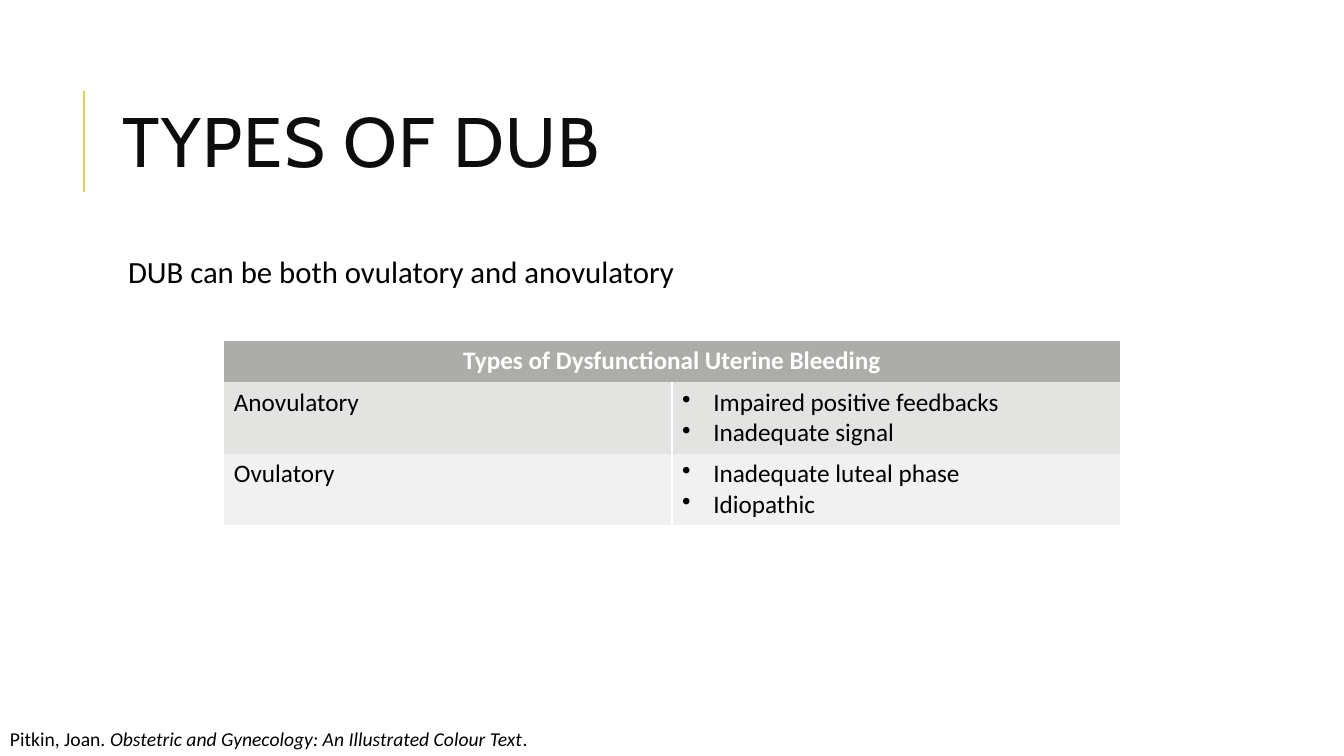
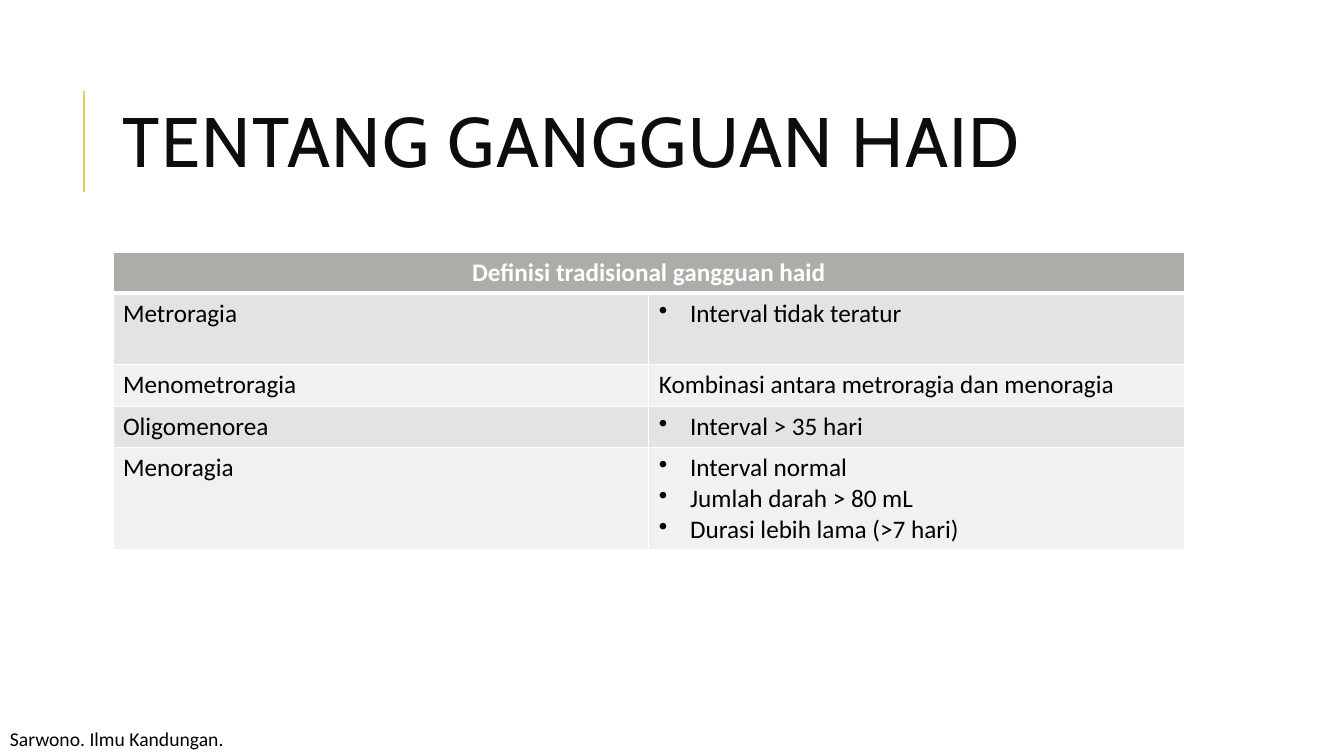
"""Two slides on menstrual disorders, each with a title, a table and a source."""
from lxml.etree import SubElement
from pptx import Presentation
from pptx.dml.color import RGBColor
from pptx.enum.shapes import MSO_CONNECTOR
from pptx.enum.text import MSO_ANCHOR, PP_ALIGN
from pptx.oxml import parse_xml
from pptx.oxml.ns import nsdecls, qn
from pptx.util import Inches, Pt

HUE = {"ink": "000000", "title": "0D0D0D", "rule": "E3CC5A", "white": "FFFFFF",
       "head": "ACADA8", "odd": "E3E3E1", "even": "F1F1F1"}
LEFT, WIDE = 1.12, 10.63

SLIDES = [
    {"title": "TYPES OF DUB",
     "lead": "DUB can be both ovulatory and anovulatory",
     "spot": (2.22, 3.38, 8.89),
     "edges": ((0, 0, 0, 0), (1, 1, 0, 0)),
     "head": "Types of Dysfunctional Uterine Bleeding",
     "rows": [("Anovulatory", 0.71, ["• Impaired positive feedbacks", "• Inadequate signal"]),
              ("Ovulatory", 0.71, ["• Inadequate luteal phase", "• Idiopathic"])],
     "note": [("Pitkin, Joan. ", False),
              ("Obstetric and Gynecology: An Illustrated Colour Text", True), (".", False)]},
    {"title": "TENTANG GANGGUAN HAID",
     "lead": None,
     "spot": (LEFT, 2.5, WIDE),
     "edges": ((1, 1, 1, 3), (1, 1, 1, 1)),
     "head": "Definisi tradisional gangguan haid",
     "rows": [("Metroragia", 0.71, ["• Interval tidak teratur"]),
              ("Menometroragia", 0.41, ["Kombinasi antara metroragia dan menoragia"]),
              ("Oligomenorea", 0.41, ["• Interval > 35 hari"]),
              ("Menoragia", 1.01, ["• Interval normal", "• Jumlah darah > 80 mL",
                                   "• Durasi lebih lama (>7 hari)"])],
     "note": [("Sarwono. Ilmu Kandungan.", False)]},
]


def style(para, size, color, face="Calibri", bold=False):
    font = para.font
    font.name, font.size, font.bold = face, Pt(size), bold
    font.color.rgb = RGBColor.from_string(HUE[color])


def paint(cell, fill, edges, lines, color="ink", bold=False):
    props = cell._tc.get_or_add_tcPr()
    for side, width in zip("LRTB", edges):
        line = SubElement(props, qn(f"a:ln{side}"), w=str(Pt(width)))
        if width:
            solid = SubElement(line, qn("a:solidFill"))
            SubElement(solid, qn("a:srgbClr"), val=HUE["white"])
        else:
            SubElement(line, qn("a:noFill"))
    cell.fill.solid()
    cell.fill.fore_color.rgb = RGBColor.from_string(HUE[fill])
    cell.text = "\n".join(line.removeprefix("• ") for line in lines)
    for para, line in zip(cell.text_frame.paragraphs, lines):
        style(para, 18, color, bold=bold)
        if line.startswith("• "):
            form = para._p.get_or_add_pPr()
            form.set("marL", str(Inches(0.31)))
            form.set("indent", str(-Inches(0.31)))
            form.insert(0, parse_xml(f'<a:buChar {nsdecls("a")} char="•"/>'))


deck = Presentation()
deck.slide_width, deck.slide_height = Inches(13.33), Inches(7.5)

for data in SLIDES:
    slide = deck.slides.add_slide(deck.slide_layouts[6])
    shapes = slide.shapes

    rule = shapes.add_connector(MSO_CONNECTOR.STRAIGHT, Inches(0.83), Inches(1.9),
                                Inches(0.83), Inches(0.9))
    rule.line.color.rgb = RGBColor.from_string(HUE["rule"])
    rule.line.width = Pt(1.5)
    SubElement(rule._element.spPr, qn("a:effectLst"))

    frame = shapes.add_textbox(Inches(LEFT), Inches(0.64), Inches(WIDE), Inches(1.64)).text_frame
    frame.word_wrap, frame.vertical_anchor = True, MSO_ANCHOR.MIDDLE
    para = frame.paragraphs[0]
    para.text, para.line_spacing = data["title"], 0.8
    style(para, 50, "title", "Cabin")
    para.runs[0]._r.get_or_add_rPr().set("spc", "100")

    if data["lead"]:
        frame = shapes.add_textbox(Inches(LEFT), Inches(2.5), Inches(WIDE), Inches(0.6)).text_frame
        frame.word_wrap, frame.margin_left = True, Inches(0.15)
        para = frame.paragraphs[0]
        para.text, para.line_spacing = data["lead"], 0.9
        style(para, 22, "ink")

    left, top, width = data["spot"]
    rows = data["rows"]
    high = [0.41] + [row[1] for row in rows]
    table = shapes.add_table(len(high), 2, Inches(left), Inches(top),
                             Inches(width), Inches(sum(high))).table
    table.first_row = table.horz_banding = False
    for row, size in zip(table.rows, high):
        row.height = Inches(size)
    crown, grid = data["edges"]
    head = table.cell(0, 0)
    head.merge(table.cell(0, 1))
    for cell in table.rows[0].cells:
        paint(cell, "head", crown, [data["head"]] if cell.is_merge_origin else [], "white", True)
    head.vertical_anchor = MSO_ANCHOR.MIDDLE
    head.text_frame.paragraphs[0].alignment = PP_ALIGN.CENTER
    for num, (name, size, facts) in enumerate(rows, 1):
        fill = "odd" if num % 2 else "even"
        paint(table.cell(num, 0), fill, grid, [name])
        paint(table.cell(num, 1), fill, grid, facts)

    frame = shapes.add_textbox(0, Inches(7.16), Inches(5.49), Inches(0.34)).text_frame
    frame.word_wrap = True
    para = frame.paragraphs[0]
    style(para, 14, "ink")
    for text, slant in data["note"]:
        run = para.add_run()
        run.text, run.font.italic = text, slant

deck.save("out.pptx")
